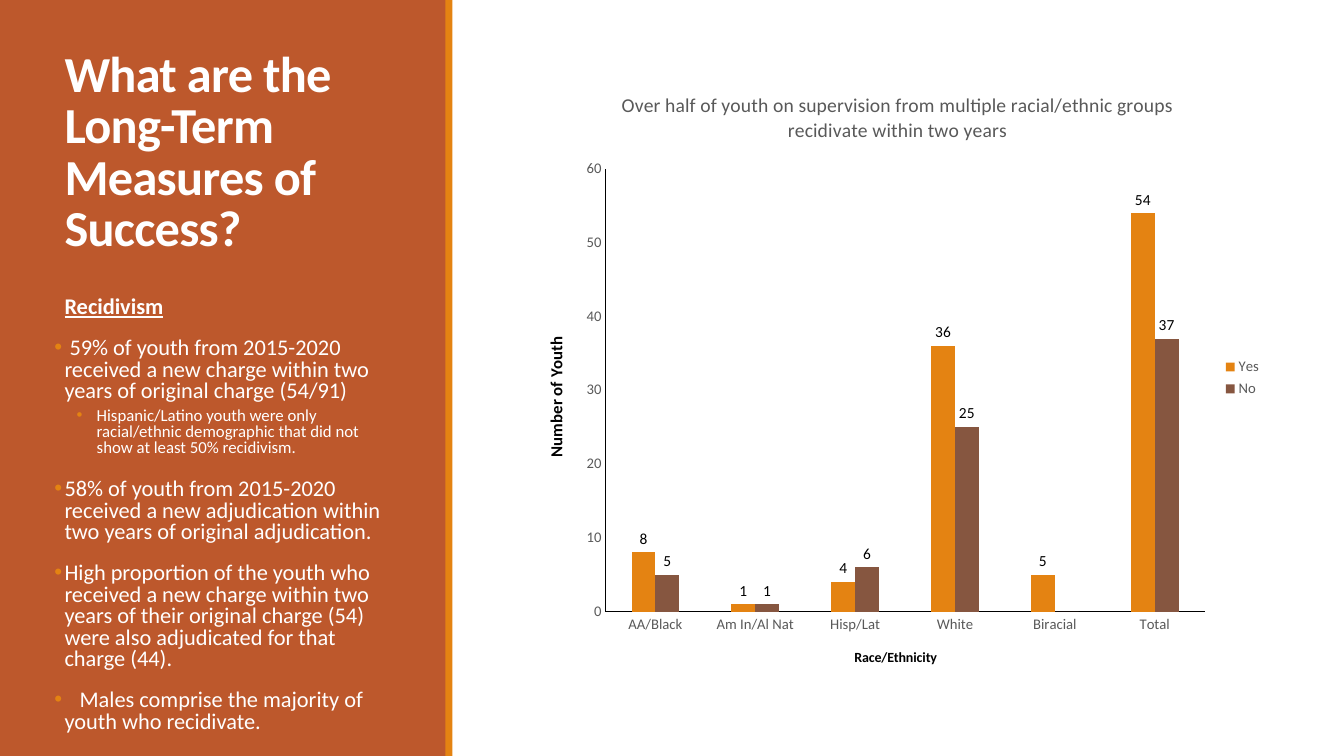
from dataclasses import dataclass

from lxml.etree import SubElement
from pptx import Presentation
from pptx.chart.data import CategoryChartData
from pptx.dml.color import RGBColor
from pptx.enum.chart import XL_CHART_TYPE, XL_LABEL_POSITION, XL_LEGEND_POSITION, XL_TICK_MARK
from pptx.enum.shapes import MSO_SHAPE
from pptx.enum.text import MSO_ANCHOR, MSO_AUTO_SIZE, PP_ALIGN
from pptx.oxml.ns import qn
from pptx.util import Pt

FACE = "Calibri"
WHITE, BLACK, GREY = "FFFFFF", "000000", "595959"
RUST, ORANGE, BROWN = "BD582C", "E48312", "865640"


@dataclass
class Band:
    left: float
    width: float
    color: str


@dataclass
class Item:
    text: str
    level: int = 0
    head: bool = False
    tab: float = 0


@dataclass
class Bars:
    name: str
    color: str
    vals: tuple


BANDS = [Band(0, 319, RUST), Band(318.2, 5, ORANGE)]

ITEMS = [
    Item("Recidivism", head=True),
    Item(" 59% of youth from 2015-2020 received a new charge within two years "
         "of original charge (54/91)"),
    Item("Hispanic/Latino youth were only racial/ethnic demographic that did not "
         "show at least 50% recidivism.", level=1),
    Item("58% of youth from 2015-2020 received a new adjudication within two years "
         "of original adjudication."),
    Item("High proportion of the youth who received a new charge within two years "
         "of their original charge (54) were also adjudicated for that charge (44)."),
    Item("\tMales comprise the majority of youth who recidivate.", tab=18),
]

# Paragraph format, left margin, hanging indent and text size by level
LEVELS = [
    (dict(space_before=Pt(12), space_after=Pt(2)), 7.2, -7.2, 16),
    (dict(space_before=Pt(2), space_after=Pt(4)), 30.2, -14.4, 12),
]

GROUPS = ["AA/Black", "Am In/Al Nat", "Hisp/Lat", "White", "Biracial", "Total"]
SERIES = [
    Bars("Yes", ORANGE, (8, 1, 4, 36, 5, 54)),
    Bars("No", BROWN, (5, 1, 6, 25, 0, 37)),
]
PLOT = dict(x=0.11, y=0.16, w=0.8, h=0.72)


def paint(target, color: str) -> None:
    """Give a fill a solid colour."""
    target.solid()
    target.fore_color.rgb = RGBColor.from_string(color)


def apply(target, **form) -> None:
    for key, val in form.items():
        setattr(target, key, val)


def style(font, size: float, color: str, **form) -> None:
    apply(font, name=FACE, size=Pt(size), **form)
    font.color.rgb = RGBColor.from_string(color)


def place(shape, left: float, top: float, width: float, height: float) -> None:
    apply(shape, left=Pt(left), top=Pt(top), width=Pt(width), height=Pt(height))


def draw_band(slide, band: Band) -> None:
    shape = slide.shapes.add_shape(
        MSO_SHAPE.RECTANGLE, Pt(band.left), Pt(0), Pt(band.width), Pt(540))
    paint(shape.fill, band.color)
    shape.line.fill.background()
    shape.shadow.inherit = False


def draw_title(slide, text: str) -> None:
    title = slide.shapes.title
    place(title, 38.9, 21.6, 242.6, 165.6)
    frame = title.text_frame
    apply(frame, text=text, word_wrap=True, auto_size=MSO_AUTO_SIZE.NONE,
          vertical_anchor=MSO_ANCHOR.BOTTOM)
    para = frame.paragraphs[0]
    apply(para, alignment=PP_ALIGN.LEFT, line_spacing=0.85)
    run = para.runs[0]
    style(run.font, 36, WHITE, bold=True)
    run._r.get_or_add_rPr().set("spc", "-50")


def draw_item(para, item: Item) -> None:
    form, left, hang, size = LEVELS[item.level]
    apply(para, level=item.level, line_spacing=0.8, alignment=PP_ALIGN.LEFT, **form)
    run = para.add_run()
    run.text = item.text
    style(run.font, size, WHITE, bold=item.head, underline=item.head)

    # Indents and bullet
    props = para._p.get_or_add_pPr()
    props.set("marL", str(Pt(left)))
    props.set("indent", str(Pt(0 if item.head else hang)))
    if item.head:
        SubElement(props, qn("a:buNone"))
    else:
        tint = SubElement(props, qn("a:buClr"))
        SubElement(tint, qn("a:srgbClr"), val=ORANGE)
        SubElement(props, qn("a:buChar"), char="•")
    if item.tab:
        tabs = SubElement(props, qn("a:tabLst"))
        SubElement(tabs, qn("a:tab"), pos=str(Pt(item.tab)), algn="l")


def draw_list(slide, items: list[Item]) -> None:
    body = slide.placeholders[1]
    place(body, 38.9, 208.8, 242.6, 324)
    frame = body.text_frame
    apply(frame, word_wrap=True, auto_size=MSO_AUTO_SIZE.NONE,
          vertical_anchor=MSO_ANCHOR.TOP, margin_left=0, margin_right=0,
          margin_top=Pt(3.6), margin_bottom=Pt(3.6))
    for i, item in enumerate(items):
        draw_item(frame.add_paragraph() if i else frame.paragraphs[0], item)


def name_part(part, text: str, size: float, color: str, bold: bool) -> None:
    """Write the title of a chart or of an axis."""
    frame = part.text_frame
    frame.text = text
    style(frame.paragraphs[0].runs[0].font, size, color, bold=bold)


def draw_chart(slide) -> None:
    data = CategoryChartData()
    data.categories = GROUPS
    for bars in SERIES:
        data.add_series(bars.name, bars.vals)
    chart = slide.shapes.add_chart(
        XL_CHART_TYPE.COLUMN_CLUSTERED, Pt(373.7), Pt(50.4), Pt(535), Pt(439.2), data).chart
    style(chart.font, 10, BLACK)
    chart.has_title = True
    name_part(chart.chart_title, "Over half of youth on supervision from multiple "
              "racial/ethnic groups recidivate within two years", 14, GREY, False)

    # Axes
    for axis, text, size in ((chart.category_axis, "Race/Ethnicity", 10),
                             (chart.value_axis, "Number of Youth", 12)):
        apply(axis, has_major_gridlines=False, has_title=True,
              major_tick_mark=XL_TICK_MARK.NONE, minor_tick_mark=XL_TICK_MARK.NONE)
        name_part(axis.axis_title, text, size, BLACK, True)
        style(axis.tick_labels.font, 10.5, GREY)
        paint(axis.format.line.fill, BLACK)
        axis.format.line.width = Pt(0.75)
    apply(chart.value_axis, minimum_scale=0, maximum_scale=60, major_unit=10)

    # Legend
    chart.has_legend = True
    apply(chart.legend, position=XL_LEGEND_POSITION.RIGHT, include_in_layout=False)
    style(chart.legend.font, 10.5, GREY)

    # Columns; the number format leaves zero without a label
    plot = chart.plots[0]
    apply(plot, gap_width=219, overlap=0, vary_by_categories=False)
    for bars, series in zip(SERIES, plot.series):
        paint(series.format.fill, bars.color)
        labels = series.data_labels
        apply(labels, show_value=True, position=XL_LABEL_POSITION.OUTSIDE_END,
              number_format="0;;", number_format_is_linked=False)
        style(labels.font, 11, BLACK)

    # Fixed inner plot area
    area = chart._chartSpace.chart.plotArea
    for old in area.findall(qn("c:layout")):
        area.remove(old)
    layout = SubElement(area, qn("c:layout"))
    area.insert(0, layout)
    manual = SubElement(layout, qn("c:manualLayout"))
    SubElement(manual, qn("c:layoutTarget"), val="inner")
    for key in "xy":
        SubElement(manual, qn(f"c:{key}Mode"), val="edge")
    for key, val in PLOT.items():
        SubElement(manual, qn(f"c:{key}"), val=str(val))


def main() -> None:
    deck = Presentation()
    apply(deck, slide_width=Pt(960), slide_height=Pt(540))
    slide = deck.slides.add_slide(deck.slide_layouts[1])
    paint(slide.background.fill, WHITE)
    texts = list(slide.placeholders)
    for band in BANDS:
        draw_band(slide, band)
    # Bring the placeholders in front of the bands
    for text in texts:
        slide.shapes._spTree.append(text._element)
    draw_title(slide, "What are the Long-Term Measures of Success?")
    draw_list(slide, ITEMS)
    draw_chart(slide)
    deck.save("out.pptx")


if __name__ == "__main__":
    main()
